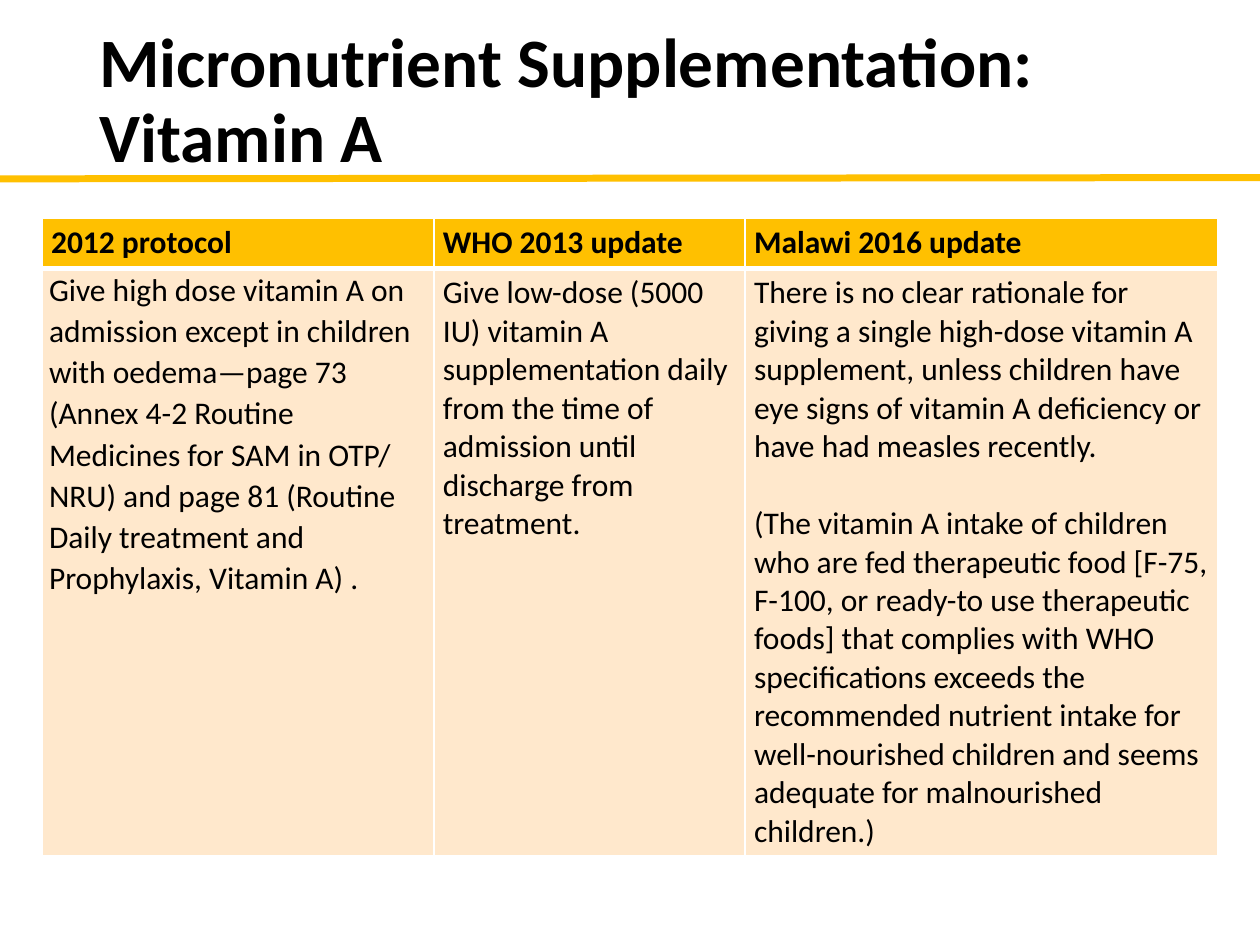
from dataclasses import dataclass

from lxml.etree import SubElement
from pptx import Presentation
from pptx.dml.color import RGBColor
from pptx.enum.text import MSO_ANCHOR
from pptx.oxml.ns import qn
from pptx.util import Pt

FONT = "Calibri"
HEX = {"gold": "FFC000", "cream": "FFE8CC", "text": "000000", "edge": "FFFFFF"}
HEAD_H, BODY_H = 28.8, 335.5
EDGE, RULE = 1, 3


@dataclass
class Column:
    width: float
    head: str
    body: list[str]
    pad: tuple[float, float] = (5.2, 2.9)
    leading: float = 1.0


COLUMNS = [
    Column(223.9, "2012 protocol", [
        "Give high dose vitamin A on admission except in children with "
        "oedema—page 73 (Annex 4-2 Routine Medicines for SAM in OTP/ NRU) "
        "and page 81 (Routine Daily treatment and Prophylaxis, Vitamin A) ."],
        pad=(4, 0), leading=1.07),
    Column(177.8, "WHO 2013 update", [
        "Give low-dose (5000 IU) vitamin A supplementation daily from the "
        "time of admission until discharge from treatment."]),
    Column(270, "Malawi 2016 update", [
        "There is no clear rationale for giving a single high-dose vitamin A "
        "supplement, unless children have eye signs of vitamin A deficiency "
        "or have had measles recently.",
        "(The vitamin A intake of children who are fed therapeutic food "
        "[F-75, F-100, or ready-to use therapeutic foods] that complies with "
        "WHO specifications exceeds the recommended nutrient intake for "
        "well-nourished children and seems adequate for malnourished "
        "children.)"]),
]


def color(name: str) -> RGBColor:
    return RGBColor.from_string(HEX[name])


def write(frame, texts: list[str], size: float, bold: bool,
          leading: float = 1.0, gap: float = 0) -> None:
    """Fill a text frame, one paragraph a text, with a gap between them."""
    for i, text in enumerate(texts):
        para = frame.add_paragraph() if i else frame.paragraphs[0]
        para.text = text
        para.line_spacing = leading
        para.space_before = Pt(gap if i else 0)
        font = para.font
        font.name, font.size, font.bold = FONT, Pt(size), bold
        font.color.rgb = color("text")


def add_title(slide, text: str) -> None:
    box = slide.shapes.add_textbox(Pt(49.7), Pt(28.8), Pt(620.6), Pt(59.8))
    frame = box.text_frame
    frame.word_wrap = True
    frame.vertical_anchor = MSO_ANCHOR.MIDDLE
    write(frame, [text], 39.6, True, leading=0.9)


def add_rule(slide) -> None:
    line = slide.shapes.add_connector(1, Pt(0), Pt(102.2), Pt(720), Pt(101.5))
    line.line.color.rgb = color("gold")
    line.line.width = Pt(4)
    SubElement(line._element.spPr, qn("a:effectLst"))


def add_edges(cell, top: float, bottom: float) -> None:
    props = cell._tc.get_or_add_tcPr()
    for side, width in zip("LRTB", (EDGE, EDGE, top, bottom)):
        line = SubElement(props, qn(f"a:ln{side}"), w=str(Pt(width)))
        fill = SubElement(line, qn("a:solidFill"))
        SubElement(fill, qn("a:srgbClr"), val=HEX["edge"])


def style(cell, fill: str, pad: tuple[float, float]) -> None:
    cell.margin_left = cell.margin_right = Pt(pad[0])
    cell.margin_top = cell.margin_bottom = Pt(pad[1])
    cell.fill.solid()
    cell.fill.fore_color.rgb = color(fill)


def add_grid(slide, columns: list[Column]) -> None:
    width = sum(col.width for col in columns)
    table = slide.shapes.add_table(2, len(columns), Pt(24), Pt(124.8),
                                   Pt(width), Pt(HEAD_H + BODY_H)).table
    table.horz_banding = False
    for row, height in zip(table.rows, (HEAD_H, BODY_H)):
        row.height = Pt(height)
    for i, col in enumerate(columns):
        table.columns[i].width = Pt(col.width)
        head, body = table.cell(0, i), table.cell(1, i)
        add_edges(head, EDGE, RULE)
        add_edges(body, RULE, EDGE)
        style(head, "gold", (5.2, 2.9))
        style(body, "cream", col.pad)
        write(head.text_frame, [col.head], 18, True)
        write(body.text_frame, col.body, 18, False, col.leading, gap=22)


def main() -> None:
    deck = Presentation()
    deck.slide_width, deck.slide_height = Pt(720), Pt(540)
    slide = deck.slides.add_slide(deck.slide_layouts[6])
    add_rule(slide)
    add_title(slide, "Micronutrient Supplementation: Vitamin A")
    add_grid(slide, COLUMNS)
    deck.save("out.pptx")


if __name__ == "__main__":
    main()
